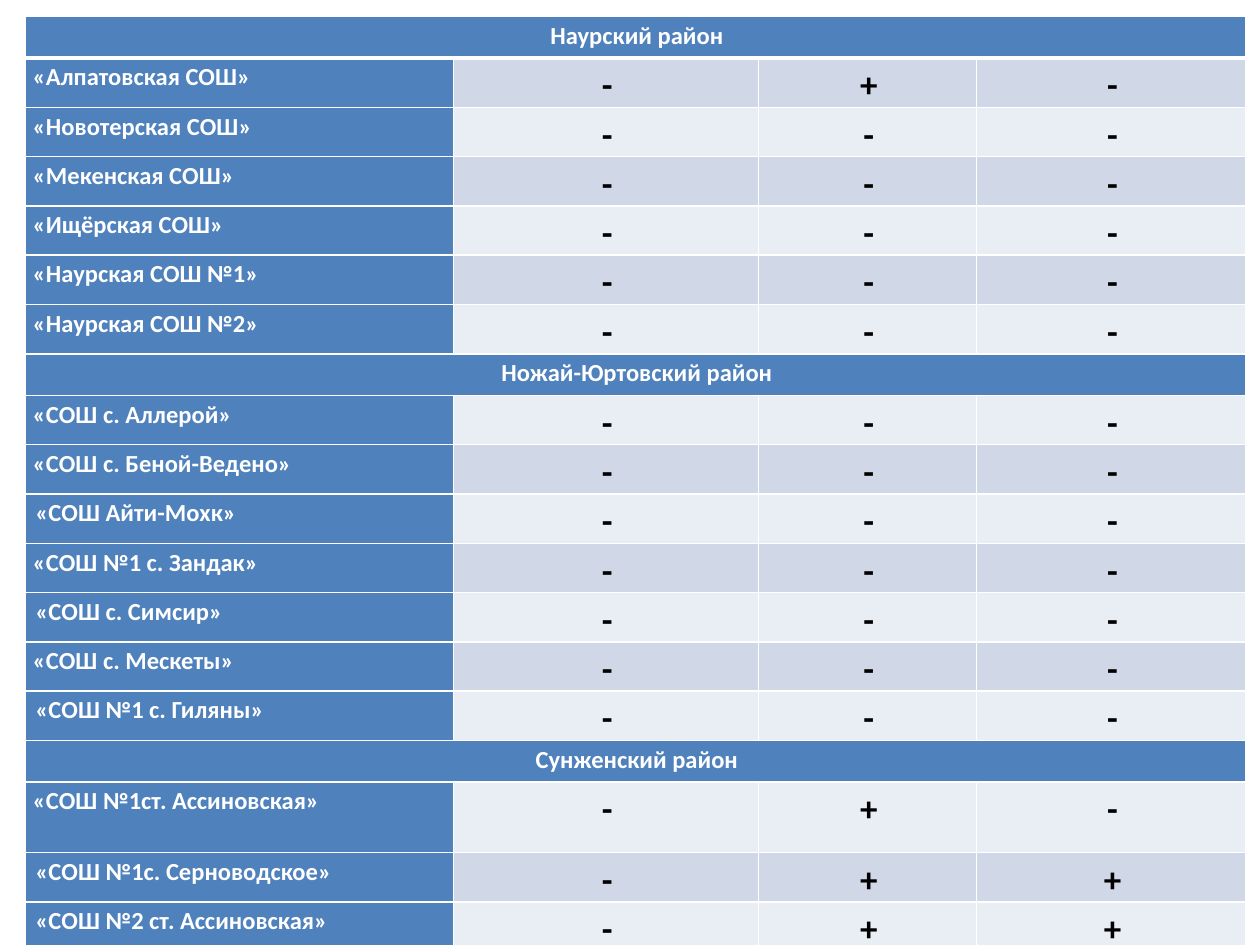
from lxml.etree import SubElement
from pptx import Presentation
from pptx.dml.color import RGBColor
from pptx.enum.text import PP_ALIGN
from pptx.oxml.ns import qn
from pptx.util import Inches, Pt

BLUE, WHITE, BLACK = "4F81BD", "FFFFFF", "000000"
BANDS = ["E9EDF4", "D0D8E8"]
COLS = [3.4, 2.42, 1.73, 2.14]
HEAD, BODY, TALL = 0.33, 0.37, 0.56
INDENT = 0.02

# District, then its schools: name, three marks, left indent
GROUPS = [
    ("Наурский район", [
        ("«Алпатовская СОШ»", "-+-", 0),
        ("«Новотерская СОШ»", "---", 0),
        ("«Мекенская СОШ»", "---", 0),
        ("«Ищёрская СОШ»", "---", 0),
        ("«Наурская СОШ №1»", "---", 0),
        ("«Наурская СОШ №2»", "---", 0),
    ]),
    ("Ножай-Юртовский район", [
        ("«СОШ с. Аллерой»", "---", 0),
        ("«СОШ с. Беной-Ведено»", "---", 0),
        ("«СОШ Айти-Мохк»", "---", INDENT),
        ("«СОШ №1 с. Зандак»", "---", 0),
        ("«СОШ с. Симсир»", "---", INDENT),
        ("«СОШ с. Мескеты»", "---", 0),
        ("«СОШ №1 с. Гиляны»", "---", INDENT),
    ]),
    ("Сунженский район", [
        ("«СОШ №1ст. Ассиновская»", "-+-", 0),
        ("«СОШ №1с. Серноводское»", "-++", INDENT),
        ("«СОШ №2 ст. Ассиновская»", "-++", INDENT),
    ]),
]
TALL_NAME = "«СОШ №1ст. Ассиновская»"


def color(code):
    return RGBColor.from_string(code)


class Deck:
    def __init__(self):
        self.prs = Presentation()
        self.prs.slide_width, self.prs.slide_height = Inches(10), Inches(7.5)
        self.slide = self.prs.slides.add_slide(self.prs.slide_layouts[6])
        self.font = "Calibri"

    def table(self, left, top, cols, rows):
        frame = self.slide.shapes.add_table(
            len(rows), len(cols), Inches(left), Inches(top),
            Inches(sum(cols)), Inches(sum(rows)))
        table = frame.table
        table.horz_banding = False
        for col, width in zip(table.columns, cols):
            col.width = Inches(width)
        for row, height in zip(table.rows, rows):
            row.height = Inches(height)
        return table

    def edges(self, cell, top=1, bottom=1):
        """Draw white cell borders; call before the cell is filled."""
        props = cell._tc.get_or_add_tcPr()
        for side, width in zip("LRTB", (1, 1, top, bottom)):
            line = SubElement(props, qn("a:ln" + side), w=str(Pt(width)))
            fill = SubElement(line, qn("a:solidFill"))
            SubElement(fill, qn("a:srgbClr"), val=WHITE)

    def cell(self, cell, text, fill, ink=WHITE, size=14, center=True,
             indent=INDENT):
        cell.fill.solid()
        cell.fill.fore_color.rgb = color(fill)
        cell.margin_left = cell.margin_right = Inches(0.06)
        cell.margin_top = cell.margin_bottom = 0
        cell.text = text
        para = cell.text_frame.paragraphs[0]
        para.alignment = PP_ALIGN.CENTER if center else PP_ALIGN.LEFT
        para.line_spacing = 1.15
        props = para._p.get_or_add_pPr()
        props.set("marL", str(Inches(indent)))
        props.set("indent", "0")
        para.font.name, para.font.size = self.font, Pt(size)
        para.font.bold = True
        para.font.color.rgb = color(ink)


def main():
    deck = Deck()
    heights = []
    for _, schools in GROUPS:
        heights.append(HEAD)
        heights += [TALL if name == TALL_NAME else BODY
                    for name, _, _ in schools]
    table = deck.table(0.2, 0.13, COLS, heights)
    for row in range(len(heights)):
        for col in range(len(COLS)):
            deck.edges(table.cell(row, col), top=3 if row == 1 else 1,
                       bottom=3 if row == 0 else 1)

    row = 0
    for title, schools in GROUPS:
        head = table.cell(row, 0)
        head.merge(table.cell(row, len(COLS) - 1))
        deck.cell(head, title, BLUE)
        for row, (name, marks, indent) in enumerate(schools, row + 1):
            deck.cell(table.cell(row, 0), name, BLUE, center=False,
                      indent=indent)
            for col, mark in enumerate(marks, 1):
                deck.cell(table.cell(row, col), mark, BANDS[row % 2],
                          BLACK, 20)
        row += 1
    deck.prs.save("out.pptx")


if __name__ == "__main__":
    main()
